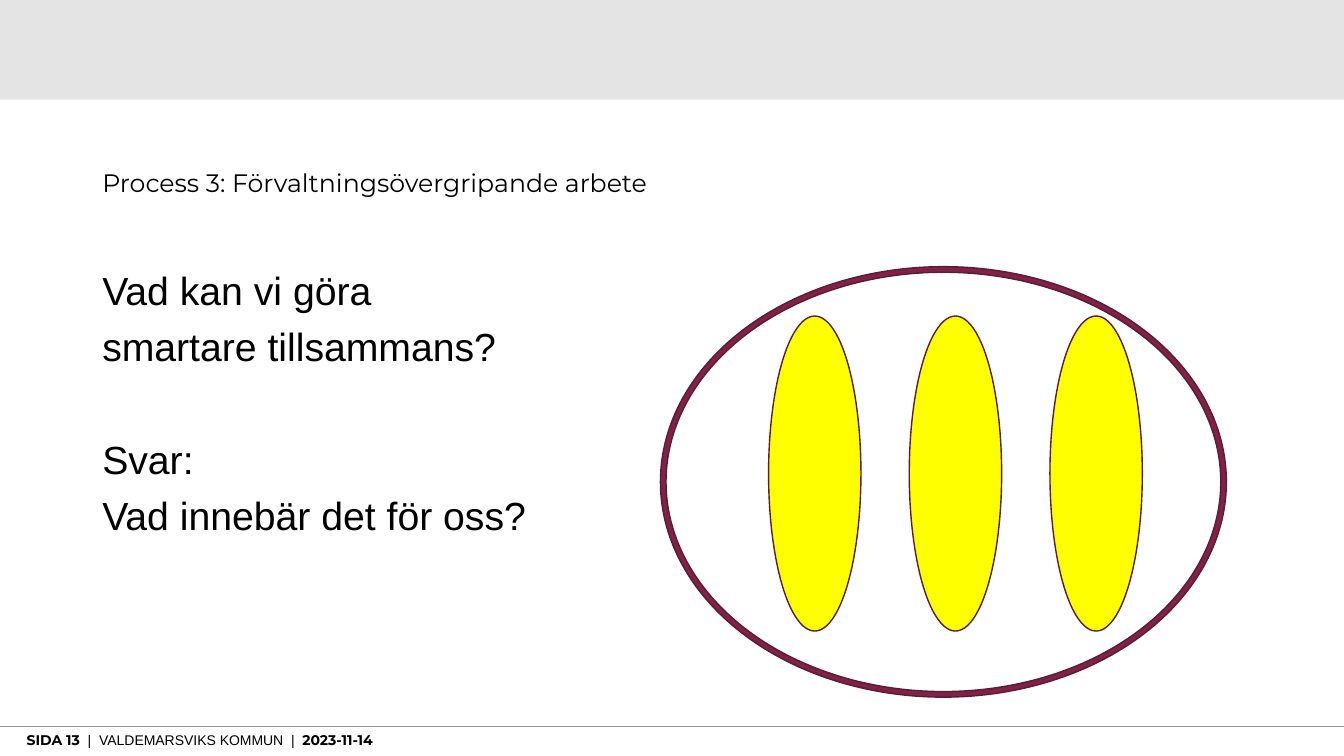
from dataclasses import dataclass

from lxml.etree import SubElement
from pptx import Presentation
from pptx.dml.color import RGBColor
from pptx.enum.shapes import MSO_CONNECTOR, MSO_SHAPE
from pptx.enum.text import MSO_ANCHOR, PP_ALIGN
from pptx.oxml.ns import qn
from pptx.util import Pt

EMU_PER_PX = 9525


@dataclass(frozen=True)
class Theme:
    """Colours, fonts and type sizes of the slide."""
    band: str = "DFDEDE"
    rule: str = "929990"
    ink: str = "000000"
    yellow: str = "FFFF00"
    plum: str = "7F2346"
    outline: str = "5E1A34"
    heading: str = "Montserrat"
    text: str = "Arial"
    title_pt: int = 18
    body_pt: int = 28
    footer_pt: int = 10


THEME = Theme()


def px(*lengths):
    """Turn pixel lengths into EMU."""
    return [n * EMU_PER_PX for n in lengths]


def add_run(p, text, font, size, bold=False):
    """Append one formatted run to a paragraph."""
    r = p.add_run()
    r.text = text
    r.font.name = font
    r.font.size = Pt(size)
    r.font.bold = bold
    r.font.color.rgb = RGBColor.from_string(THEME.ink)


def add_text_box(s, box):
    """Add a wrapping, top-anchored text box and return its frame."""
    tf = s.shapes.add_textbox(*px(*box)).text_frame
    tf.word_wrap = True
    tf.vertical_anchor = MSO_ANCHOR.TOP
    return tf


def add_figure(s, kind, box, fill, line=None):
    """Add a filled preset shape without shadow."""
    sp = s.shapes.add_shape(kind, *px(*box))
    sp.shadow.inherit = False
    sp.fill.solid()
    sp.fill.fore_color.rgb = RGBColor.from_string(fill)
    if line:
        sp.line.color.rgb = RGBColor.from_string(line)
        sp.line.width = Pt(1)
    else:
        sp.line.fill.background()
    return sp


def add_band(s):
    """Add the translucent band across the top."""
    sp = add_figure(s, MSO_SHAPE.RECTANGLE, (0, 0, 1280, 95), THEME.band)
    color = sp.fill._xPr.find(qn("a:solidFill"))[0]
    SubElement(color, qn("a:alpha"), val="80000")


def add_rule(s, y):
    """Add a thin line over the full slide width."""
    line = s.shapes.add_connector(MSO_CONNECTOR.STRAIGHT, *px(0, y, 1280, y))
    line.line.color.rgb = RGBColor.from_string(THEME.rule)
    line.line.width = Pt(0.5)
    SubElement(line._element.spPr, qn("a:effectLst"))


def add_footer(s):
    """Add the page, municipality and date line."""
    p = add_text_box(s, (16, 692, 428, 26)).paragraphs[0]
    add_run(p, "SIDA 13  ", THEME.heading, THEME.footer_pt, True)
    add_run(p, "|  VALDEMARSVIKS KOMMUN  |  ", THEME.text, THEME.footer_pt)
    add_run(p, "2023-11-14", THEME.heading, THEME.footer_pt, True)


def set_title(s, text):
    """Place and format the title placeholder."""
    sp = s.shapes.title
    sp.left, sp.top, sp.width, sp.height = px(88, 158, 1104, 62)
    tf = sp.text_frame
    tf.vertical_anchor = MSO_ANCHOR.TOP
    p = tf.paragraphs[0]
    p.alignment = PP_ALIGN.LEFT
    p.line_spacing = 0.9
    add_run(p, text, THEME.heading, THEME.title_pt)


def add_body(s, lines):
    """Add body lines given as pairs of text and space before in points."""
    tf = add_text_box(s, (88, 254, 1104, 394))
    for i, (text, before) in enumerate(lines):
        p = tf.add_paragraph() if i else tf.paragraphs[0]
        p.line_spacing = 0.9
        p.space_before = Pt(before)
        add_run(p, text, THEME.text, THEME.body_pt)


def add_joint_work(s):
    """Add three upright ellipses enclosed by one ring."""
    for i in range(3):
        add_figure(s, MSO_SHAPE.OVAL, (732 + 134 * i, 301, 88, 300),
                   THEME.yellow, THEME.outline)
    ring = add_figure(s, MSO_SHAPE.DONUT, (629, 254, 539, 410),
                      THEME.plum, THEME.outline)
    ring.adjustments[0] = 0.013


def main():
    """Build the slide and save it."""
    prs = Presentation()
    prs.slide_width, prs.slide_height = px(1280, 720)
    s = prs.slides.add_slide(prs.slide_layouts[5])
    add_band(s)
    add_rule(s, 692)
    add_footer(s)
    set_title(s, "Process 3: Förvaltningsövergripande arbete")
    add_body(s, [
        ("Vad kan vi göra", 0),
        ("smartare tillsammans?", 10),
        ("Svar:", 50),
        ("Vad innebär det för oss?", 10),
    ])
    add_joint_work(s)
    prs.save("out.pptx")


if __name__ == "__main__":
    main()
